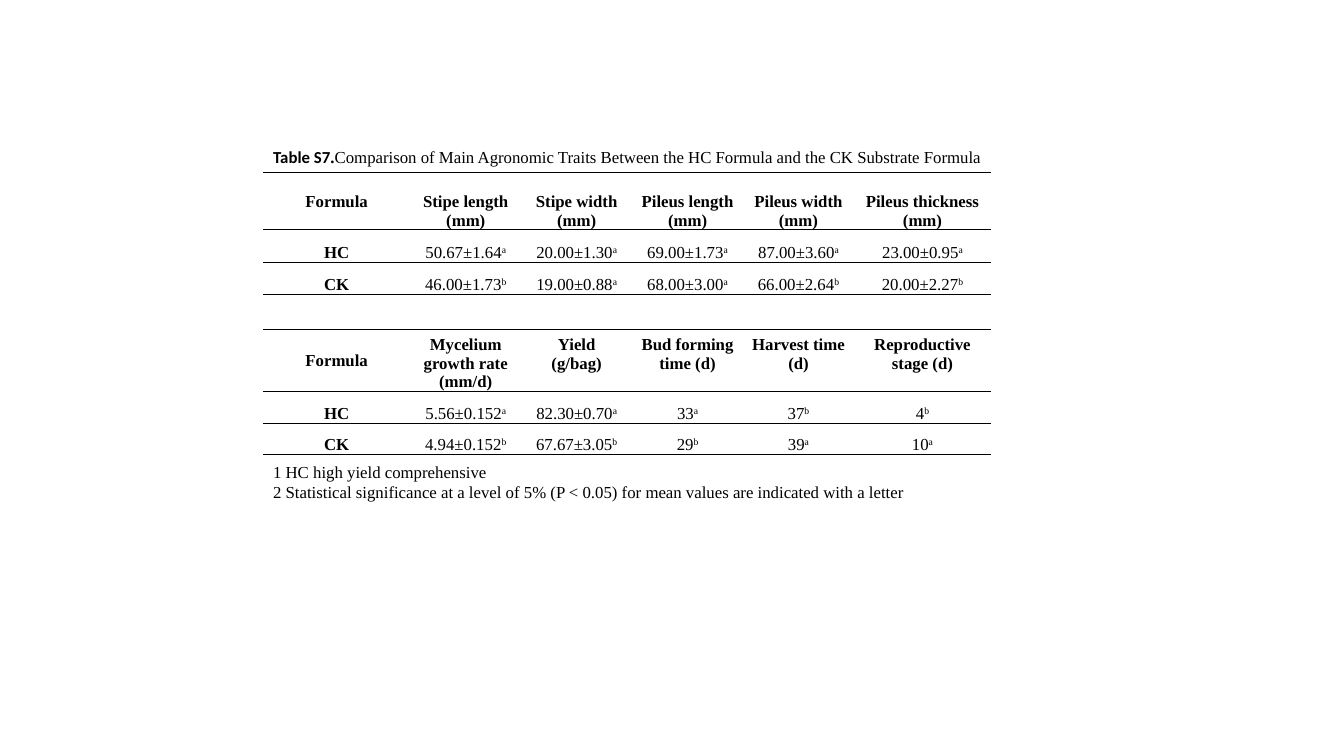
from lxml.etree import SubElement
from pptx import Presentation
from pptx.dml.color import RGBColor
from pptx.enum.text import MSO_ANCHOR, MSO_AUTO_SIZE, PP_ALIGN
from pptx.oxml import parse_xml
from pptx.oxml.ns import nsdecls, qn
from pptx.util import Inches, Pt

BLACK = "000000"
NO_STYLE = "{2D5ABB26-0587-4C30-8999-92F81FD0307C}"
LEFT = 2.61
COLUMN_WIDTHS = [1.46, 1.1, 1.1, 1.1, 1.1, 1.36]


def format_run(run, bold=False, font_name="Times New Roman", color=BLACK):
    run.font.name = font_name
    run.font.size = Pt(12)
    run.font.bold = bold
    run.font.color.rgb = RGBColor.from_string(color)


def add_rule(cell, tag):
    """Draw a thin black line on one side of a cell: a:lnT or a:lnB."""
    line = parse_xml(f'<{tag} {nsdecls("a")} w="6350"/>')
    fill = SubElement(line, qn("a:solidFill"))
    SubElement(fill, qn("a:srgbClr"), val=BLACK)
    cell._tc.get_or_add_tcPr().insert(0, line)


presentation = Presentation()
presentation.slide_width = Inches(13.33)
presentation.slide_height = Inches(7.5)
slide = presentation.slides.add_slide(presentation.slide_layouts[5])

# Caption
title = slide.shapes.title
title.left, title.top = Inches(LEFT), Inches(1.41)
title.width, title.height = Inches(9.45), Inches(0.3)
title.text_frame.word_wrap = True
title.text_frame.auto_size = MSO_AUTO_SIZE.NONE
title.text_frame.vertical_anchor = MSO_ANCHOR.TOP
caption = title.text_frame.paragraphs[0]
caption.alignment = PP_ALIGN.JUSTIFY
for text, bold, font_name in [
    ("Table S7", True, "Calibri"),
    (".", True, "Times New Roman"),
    ("Comparison of Main Agronomic Traits Between the HC Formula "
     "and the CK Substrate Formula", False, "Times New Roman"),
]:
    run = caption.add_run()
    run.text = text
    format_run(run, bold, font_name)

# Each measured value is paired with its significance letter
size_rows = [
    ["Formula", "Stipe length (mm)", "Stipe width (mm)", "Pileus length (mm)",
     "Pileus width (mm)", "Pileus thickness (mm)"],
    ["HC", ("50.67±1.64", "a"), ("20.00±1.30", "a"), ("69.00±1.73", "a"),
     ("87.00±3.60", "a"), ("23.00±0.95", "a")],
    ["CK", ("46.00±1.73", "b"), ("19.00±0.88", "a"), ("68.00±3.00", "a"),
     ("66.00±2.64", "b"), ("20.00±2.27", "b")],
]
growth_rows = [
    ["Formula", "Mycelium growth rate (mm/d)", "Yield\n(g/bag)",
     "Bud forming time (d)", "Harvest time (d)", "Reproductive stage (d)"],
    ["HC", ("5.56±0.152", "a"), ("82.30±0.70", "a"), ("33", "a"),
     ("37", "b"), ("4", "b")],
    ["CK", ("4.94±0.152", "b"), ("67.67±3.05", "b"), ("29", "b"),
     ("39", "a"), ("10", "a")],
]

# Tables: top, row heights, header anchor, header top margin, contents
for top, heights, header_anchor, header_margin, rows in [
    (1.71, [0.57, 0.32, 0.32], MSO_ANCHOR.BOTTOM, 0.01, size_rows),
    (3.27, [0.61, 0.31, 0.31], MSO_ANCHOR.TOP, 0.06, growth_rows),
]:
    frame = slide.shapes.add_table(
        len(rows), len(COLUMN_WIDTHS), Inches(LEFT), Inches(top),
        Inches(sum(COLUMN_WIDTHS)), Inches(sum(heights)))
    table = frame.table
    table.first_row = table.horz_banding = False
    table._tbl.tblPr.find(qn("a:tableStyleId")).text = NO_STYLE
    for column, width in zip(table.columns, COLUMN_WIDTHS):
        column.width = Inches(width)
    for row_index, (height, values) in enumerate(zip(heights, rows)):
        table.rows[row_index].height = Inches(height)
        for column_index, value in enumerate(values):
            cell = table.cell(row_index, column_index)
            cell.fill.background()
            cell.margin_left = cell.margin_right = cell.margin_top = Inches(0.01)
            cell.margin_bottom = 0
            cell.vertical_anchor = MSO_ANCHOR.BOTTOM
            if row_index == 0 and column_index == 0:
                cell.vertical_anchor = MSO_ANCHOR.MIDDLE
            elif row_index == 0:
                cell.vertical_anchor = header_anchor
                cell.margin_top = Inches(header_margin)

            is_label = isinstance(value, str)
            cell.text_frame.text = value if is_label else value[0]
            if not is_label:
                letter = cell.text_frame.paragraphs[0].add_run()
                letter.text = value[1]
                letter.font._element.set("baseline", "30000")
            for paragraph in cell.text_frame.paragraphs:
                paragraph.alignment = PP_ALIGN.CENTER
                for run in paragraph.runs:
                    format_run(run, bold=is_label)

            if row_index != 1:
                add_rule(cell, "a:lnB")
            if row_index != 2:
                add_rule(cell, "a:lnT")

# Footnotes
footnotes = slide.shapes.add_textbox(
    Inches(LEFT), Inches(4.53), Inches(8.98), Inches(0.5))
footnotes.text_frame.word_wrap = True
footnotes.text_frame.text = (
    "1 HC high yield comprehensive\n"
    "2 Statistical significance at a level of 5% (P < 0.05) "
    "for mean values are indicated with a letter")
for paragraph in footnotes.text_frame.paragraphs:
    for run in paragraph.runs:
        format_run(run)

presentation.save("out.pptx")
